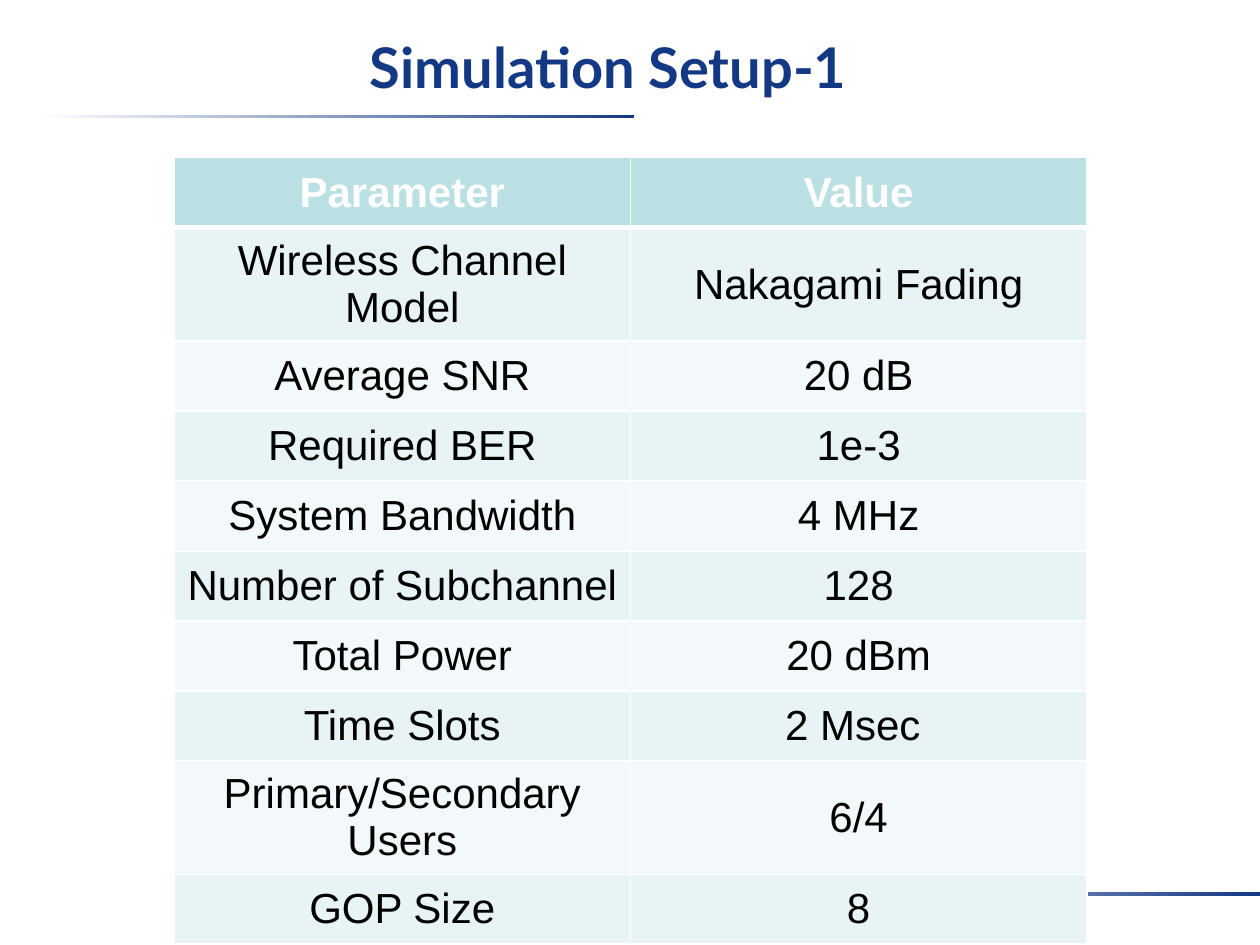
"""Build the simulation setup slide with its parameter table."""
from lxml import etree
from pptx import Presentation
from pptx import util as u
from pptx.dml.color import RGBColor
from pptx.enum import shapes, text
from pptx.oxml.ns import qn

NAVY = RGBColor(0x13, 0x39, 0x84)
WHITE = RGBColor(0xFF, 0xFF, 0xFF)
BLACK = RGBColor(0x00, 0x00, 0x00)
HEADER_TEAL = RGBColor(0xBB, 0xE0, 0xE3)
BANDS = (RGBColor(0xE7, 0xF3, 0xF4), RGBColor(0xF3, 0xF9, 0xFA))

SETTINGS = [
    ("Parameter", "Value"),
    ("Wireless Channel Model", "Nakagami Fading"),
    ("Average SNR", "20 dB"),
    ("Required BER", "1e-3"),
    ("System Bandwidth", "4 MHz"),
    ("Number of Subchannel ", "128"),
    ("Total Power", "20 dBm"),
    ("Time Slots", "2 Msec "),
    ("Primary/Secondary Users", "6/4"),
    ("GOP Size", "8"),
]


def add_rule(slide, left, top):
    """Add a thin bar fading from white to navy."""
    rule = slide.shapes.add_shape(shapes.MSO_SHAPE.RECTANGLE, left, top, u.Cm(11.99), u.Cm(0.08))
    rule.shadow.inherit = False
    rule.line.fill.background()
    rule.fill.gradient()
    rule.fill.gradient_angle = 0
    for stop, color, position in zip(rule.fill.gradient_stops, (WHITE, NAVY), (0, 1)):
        stop.color.rgb = color
        stop.position = position


def write(frame, wording, font_name, size, color, bold):
    """Write one centred run into a text frame."""
    paragraph = frame.paragraphs[0]
    paragraph.alignment = text.PP_ALIGN.CENTER
    run = paragraph.add_run()
    run.text = wording
    run.font.name = font_name
    run.font.size = u.Pt(size)
    run.font.bold = bold
    run.font.color.rgb = color


def add_title(slide, wording):
    """Add the slide title."""
    title = slide.shapes.add_textbox(u.Cm(1.47), u.Cm(0.51), u.Cm(21.59), u.Cm(1.9))
    frame = title.text_frame
    frame.word_wrap = True
    frame.margin_top = u.Cm(0.15)
    write(frame, wording, "Lato", 32, NAVY, True)


def set_borders(cell, top, bottom):
    """Give a cell white borders, with top and bottom widths in points."""
    properties = cell._tc.get_or_add_tcPr()
    for index, (side, width) in enumerate((("L", 1), ("R", 1), ("T", top), ("B", bottom))):
        border = etree.Element(qn(f"a:ln{side}"), w=str(u.Pt(width)))
        fill = etree.SubElement(border, qn("a:solidFill"))
        etree.SubElement(fill, qn("a:srgbClr"), val=str(WHITE))
        properties.insert(index, border)


def add_settings_table(slide, settings):
    """Add the banded table of parameters and values."""
    row_height = u.Cm(1.41)
    table = slide.shapes.add_table(
        len(settings), 2, u.Cm(3.51), u.Cm(3.18), u.Cm(18.4), row_height * len(settings)
    ).table
    for row_index, setting in enumerate(settings):
        header = row_index == 0
        table.rows[row_index].height = row_height
        for cell, wording in zip(table.rows[row_index].cells, setting):
            cell.vertical_anchor = text.MSO_ANCHOR.MIDDLE
            cell.fill.solid()
            cell.fill.fore_color.rgb = HEADER_TEAL if header else BANDS[(row_index - 1) % 2]
            set_borders(cell, 3 if row_index == 1 else 1, 3 if header else 1)
            write(cell.text_frame, wording, "Arial", 24, WHITE if header else BLACK, header)


def main():
    """Assemble and save the slide."""
    deck = Presentation()
    deck.slide_width, deck.slide_height = u.Cm(25.4), u.Cm(19.05)
    slide = deck.slides.add_slide(deck.slide_layouts[6])
    add_rule(slide, u.Cm(0.79), u.Cm(2.31))
    add_rule(slide, u.Cm(13.41), u.Cm(17.98))
    add_title(slide, "Simulation Setup-1")
    add_settings_table(slide, SETTINGS)
    deck.save("out.pptx")


if __name__ == "__main__":
    main()
